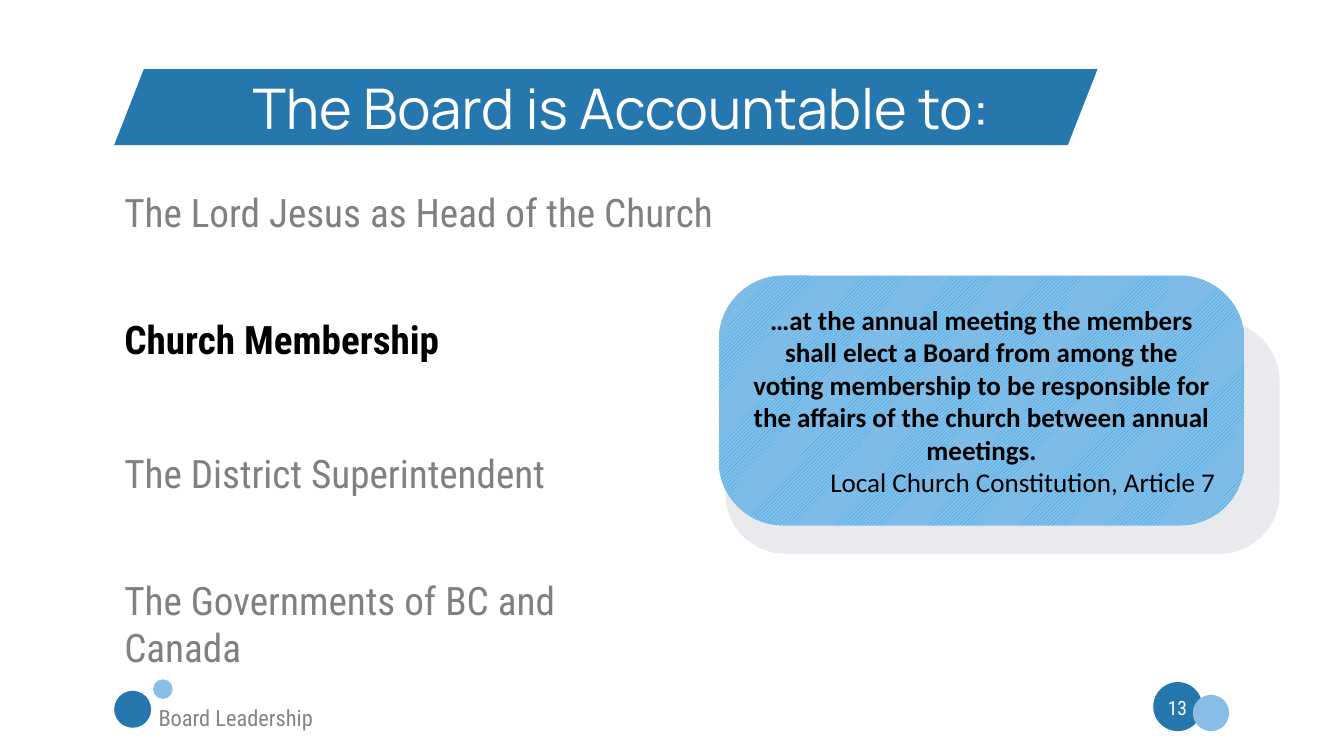
from pptx import Presentation
from pptx.dml.color import RGBColor
from pptx.enum.dml import MSO_PATTERN
from pptx.enum.shapes import MSO_SHAPE as Preset
from pptx.enum.text import MSO_ANCHOR as Anchor, MSO_AUTO_SIZE as AutoSize, PP_ALIGN as Align
from pptx.oxml.xmlchemy import OxmlElement
from pptx.util import Inches, Pt

BLUE = RGBColor(0x26, 0x77, 0xAE)
LIGHT_BLUE = RGBColor(0x88, 0xBD, 0xE7)
CYAN = RGBColor(0x00, 0xB0, 0xF0)
PALE = RGBColor(0xE9, 0xEA, 0xEE)
GREY = RGBColor(0x80, 0x80, 0x80)
FOOTER_GREY = RGBColor(0x84, 0x83, 0x88)
BLACK = RGBColor(0, 0, 0)
WHITE = RGBColor(0xFF, 0xFF, 0xFF)

TITLE_STYLE = dict(name="Manrope", size=Pt(60), bold=False)
ITEM_STYLE = dict(name="Roboto Condensed", size=Pt(42), bold=False)
ACTIVE_STYLE = dict(ITEM_STYLE, bold=True)
QUOTE_STYLE = dict(name="Calibri", size=Pt(29), bold=True)
SOURCE_STYLE = dict(QUOTE_STYLE, bold=False)
FOOTER_STYLE = dict(name="Roboto Condensed", size=Pt(24))
NUMBER_STYLE = dict(name="Roboto Condensed", size=Pt(21))

ACCOUNTABLE_TO = [
    ("The Lord Jesus as Head of the Church", ITEM_STYLE, GREY, 0),
    ("Church Membership", ACTIVE_STYLE, BLACK, 86),
    ("The District Superintendent", ITEM_STYLE, GREY, 93),
    ("The Governments of BC and\vCanada", ITEM_STYLE, GREY, 86),
]
QUOTE = ("…at the annual meeting the members shall elect a Board from among the voting "
         "membership to be responsible for the affairs of the church between annual meetings.")


def set_all(target, values):
    """Set every attribute in values on target."""
    for attribute, value in values.items():
        setattr(target, attribute, value)


def place(shape, left, top, width, height):
    """Move a placeholder to a box in inches."""
    set_all(shape, dict(left=Inches(left), top=Inches(top),
                        width=Inches(width), height=Inches(height)))


def add_plain(slide, preset, box, color, adjustment=None):
    """Add a flat preset shape without outline or shadow."""
    shape = slide.shapes.add_shape(preset, *map(Inches, box))
    shape.shadow.inherit = False
    shape.line.fill.background()
    shape.fill.solid()
    shape.fill.fore_color.rgb = color
    if adjustment is not None:
        shape.adjustments[0] = adjustment
    return shape


def prepare_frame(frame, anchor=Anchor.TOP):
    """Give a text frame the common insets, wrapping and anchor."""
    set_all(frame, dict(word_wrap=True, auto_size=AutoSize.NONE, vertical_anchor=anchor,
                        margin_left=Inches(0.15), margin_right=Inches(0.15),
                        margin_top=Inches(0.08), margin_bottom=Inches(0.08)))


def write(paragraph, text, style, color, align=Align.LEFT):
    """Write one formatted paragraph."""
    paragraph.text = text
    paragraph.alignment = align
    for run in paragraph.runs:
        set_all(run.font, style)
        run.font.color.rgb = color


def add_label(slide, box, text, style, color, align=Align.LEFT):
    """Add a one-line text box."""
    label = slide.shapes.add_textbox(*map(Inches, box))
    prepare_frame(label.text_frame)
    write(label.text_frame.paragraphs[0], text, style, color, align)


def title_banner(slide, left, top, width, height):
    """Put the title on a slanted banner."""
    banner = add_plain(slide, Preset.PARALLELOGRAM, (left, top, width, height), BLUE, 0.391)
    title = slide.shapes.title
    title._element.addprevious(banner._element)
    place(title, left + 1, top, width - 2.46, height)
    prepare_frame(title.text_frame, Anchor.MIDDLE)
    write(title.text_frame.paragraphs[0], "The Board is Accountable to:",
          TITLE_STYLE, WHITE, Align.RIGHT)


def accountability_list(slide, left, top, width, height):
    """Fill the body with the four parties, the current one in bold."""
    body = slide.placeholders[1]
    place(body, left, top, width, height)
    frame = body.text_frame
    prepare_frame(frame)
    for index, (party, style, color, gap) in enumerate(ACCOUNTABLE_TO):
        paragraph = frame.add_paragraph() if index else frame.paragraphs[0]
        properties = paragraph._p.get_or_add_pPr()
        properties.set("marL", "0")
        properties.set("indent", "0")
        properties.append(OxmlElement("a:buNone"))
        set_all(paragraph, dict(line_spacing=1.0, space_before=Pt(gap), space_after=Pt(0)))
        write(paragraph, party, style, color)


def constitution_quote(slide, left, top, width, height):
    """Draw the hatched quote panel over its pale backing."""
    add_plain(slide, Preset.ROUNDED_RECTANGLE,
              (left + 0.1, top + 0.68, width + 0.42, height - 0.26), PALE, 0.258)
    panel = add_plain(slide, Preset.ROUNDED_RECTANGLE,
                      (left, top, width, height), LIGHT_BLUE, 0.258)
    panel.fill.patterned()
    panel.fill.pattern = MSO_PATTERN.WIDE_UPWARD_DIAGONAL
    panel.fill.fore_color.rgb = CYAN
    panel.fill.back_color.rgb = LIGHT_BLUE
    frame = panel.text_frame
    prepare_frame(frame, Anchor.MIDDLE)
    write(frame.paragraphs[0], QUOTE, QUOTE_STYLE, BLACK, Align.CENTER)
    write(frame.add_paragraph(), "Local Church Constitution, Article 7",
          SOURCE_STYLE, BLACK, Align.RIGHT)


def footer(slide, left, top, width, height):
    """Place the course name at the left and the page number at the right."""
    right = left + width
    for x, y, size, color in [
        (left, top + 0.17, 0.55, BLUE),
        (left + 0.58, top, 0.29, LIGHT_BLUE),
        (right - 1.13, top + 0.04, 0.73, BLUE),
        (right - 0.54, top + height - 0.54, 0.54, LIGHT_BLUE),
    ]:
        add_plain(slide, Preset.OVAL, (x, y, size, size), color)
    add_label(slide, (left + 0.51, top + 0.29, 2.65, 0.56),
              "Board Leadership", FOOTER_STYLE, FOOTER_GREY)
    add_label(slide, (right - 1.13, top + 0.16, 0.72, 0.6),
              "13", NUMBER_STYLE, WHITE, Align.CENTER)


def main():
    """Build and save the slide."""
    presentation = Presentation()
    set_all(presentation, dict(slide_width=Inches(20.01), slide_height=Inches(11.25)))
    slide = presentation.slides.add_slide(presentation.slide_layouts[1])
    title_banner(slide, 1.7, 1.03, 14.64, 1.13)
    accountability_list(slide, 1.7, 2.72, 9.1, 7.3)
    constitution_quote(slide, 10.7, 4.1, 7.83, 3.72)
    footer(slide, 1.7, 10.11, 16.6, 0.77)
    presentation.save("out.pptx")


if __name__ == "__main__":
    main()
